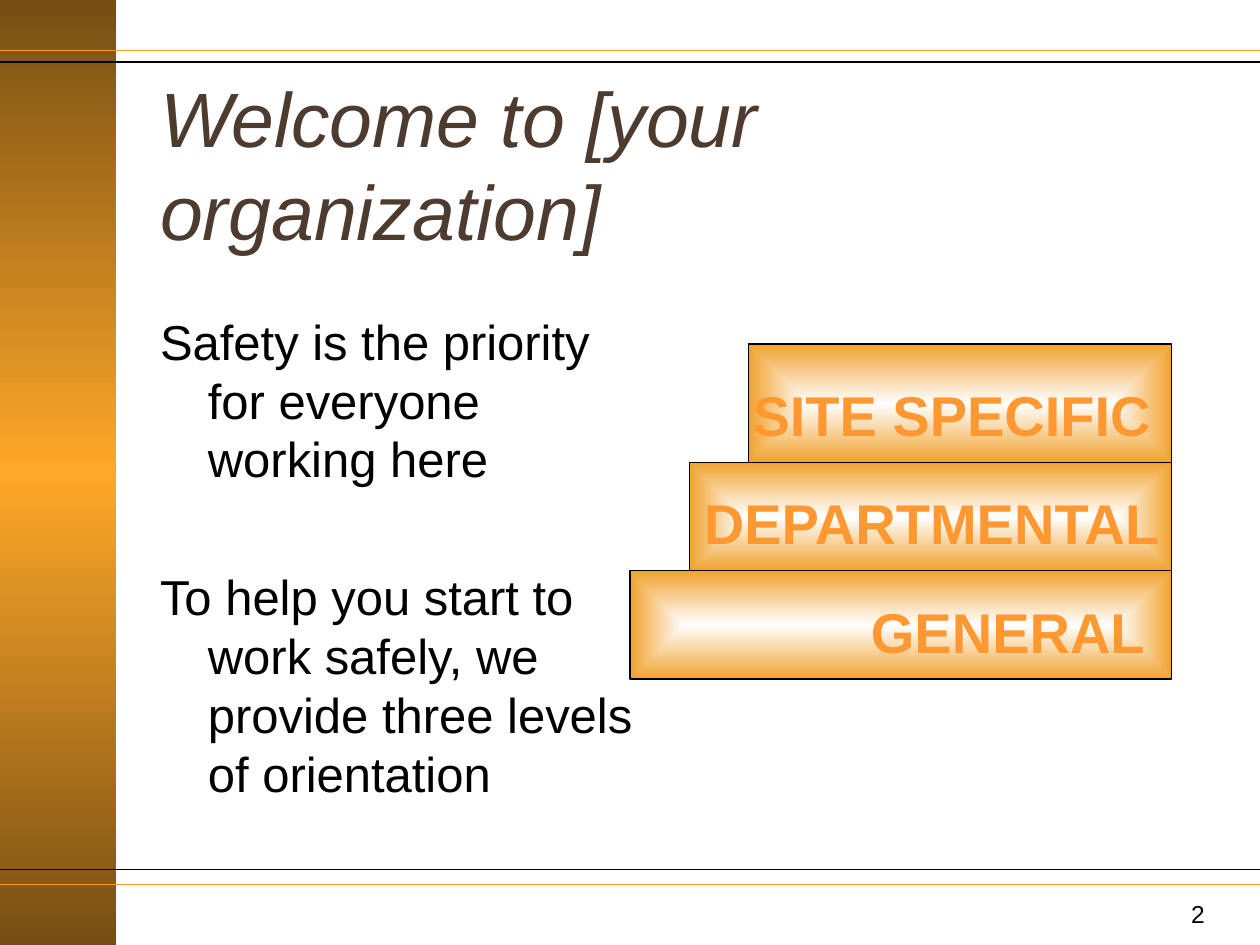
from lxml import etree
from pptx import Presentation
from pptx.dml.color import RGBColor
from pptx.enum import shapes as kinds, text as txt
from pptx.oxml.ns import qn
from pptx.util import Inches, Pt

FONT = "Arial"
BLACK = RGBColor(0x00, 0x00, 0x00)
WHITE = RGBColor(0xFF, 0xFF, 0xFF)
BROWN = RGBColor(0x4E, 0x3B, 0x30)
ORANGE = RGBColor(0xFF, 0x99, 0x33)
LABEL_ORANGE = RGBColor(0xFF, 0x98, 0x31)
STEP_AMBER = RGBColor(0xF0, 0xA2, 0x2E)
BAND_DARK = RGBColor(0x76, 0x4E, 0x13)
BAND_BRIGHT = RGBColor(0xFF, 0xA8, 0x29)

RULES = [(0.4, ORANGE), (0.49, BLACK), (6.9, BLACK), (7.02, ORANGE)]
STEPS_RIGHT = 9.3
# step left, top, height; label text, left, top, width, wrap
STEPS = [
    (5.0, 4.53, 0.86, "GENERAL", 6.8, 4.69, 2.4, False),
    (5.47, 3.67, 0.86, "DEPARTMENTAL", 5.47, 3.83, 3.85, True),
    (5.94, 2.73, 0.94, "SITE SPECIFIC", 5.86, 2.97, 3.39, False),
]
BODY = [
    ("Safety is the priority for everyone working here", 5.6),
    ("To help you start to work safely, we provide three levels of orientation", 45),
]


def set_gradient(shape, stops, from_centre=False):
    """Fill with (percent, colour) stops, running down or out from the centre."""
    shape.fill.solid()
    solid = shape._element.spPr.find(qn("a:solidFill"))
    gradient = etree.Element(qn("a:gradFill"), rotWithShape="1")
    stop_list = etree.SubElement(gradient, qn("a:gsLst"))
    for percent, colour in stops:
        stop = etree.SubElement(stop_list, qn("a:gs"), pos=str(percent * 1000))
        etree.SubElement(stop, qn("a:srgbClr"), val=str(colour))
    if from_centre:
        way = etree.SubElement(gradient, qn("a:path"), path="rect")
        etree.SubElement(way, qn("a:fillToRect"),
                         l="50000", t="50000", r="50000", b="50000")
    else:
        etree.SubElement(gradient, qn("a:lin"), ang="5400000", scaled="1")
    solid.getparent().replace(solid, gradient)


def add_rectangle(slide, left, top, width, height):
    box = slide.shapes.add_shape(kinds.MSO_SHAPE.RECTANGLE, Inches(left),
                                 Inches(top), Inches(width), Inches(height))
    box.shadow.inherit = False
    return box


def add_side_band(slide):
    band = add_rectangle(slide, 0, 0, 0.92, 7.5)
    set_gradient(band, [(0, BAND_DARK), (50, BAND_BRIGHT), (100, BAND_DARK)])
    band.line.fill.background()


def add_rule(slide, y, colour):
    rule = slide.shapes.add_connector(kinds.MSO_CONNECTOR.STRAIGHT,
                                      0, Inches(y), Inches(10), Inches(y))
    rule.line.color.rgb = colour
    rule.line.width = Pt(1)
    etree.SubElement(rule._element.spPr, qn("a:effectLst"))


def add_step(slide, left, top, height):
    step = add_rectangle(slide, left, top, STEPS_RIGHT - left, height)
    set_gradient(step, [(0, WHITE), (100, STEP_AMBER)], from_centre=True)
    step.line.color.rgb = BLACK
    step.line.width = Pt(0.75)


def add_run(paragraph, words, size, colour, bold=False, italic=False):
    run = paragraph.add_run()
    run.text = words
    run.font.name = FONT
    run.font.size = Pt(size)
    run.font.color.rgb = colour
    run.font.bold = bold
    run.font.italic = italic


def add_text(slide, words, left, top, width, height, size, colour, align,
             bold=False, wrap=False, anchor=txt.MSO_ANCHOR.TOP):
    frame = slide.shapes.add_textbox(Inches(left), Inches(top), Inches(width),
                                     Inches(height)).text_frame
    frame.word_wrap = wrap
    frame.vertical_anchor = anchor
    frame.paragraphs[0].alignment = align
    add_run(frame.paragraphs[0], words, size, colour, bold)


def place(holder, left, top, width, height, anchor):
    """Move a placeholder and return its text frame, without autofit."""
    holder.left, holder.top = Inches(left), Inches(top)
    holder.width, holder.height = Inches(width), Inches(height)
    frame = holder.text_frame
    frame.auto_size = txt.MSO_AUTO_SIZE.NONE
    frame.vertical_anchor = anchor
    return frame


def fill_title(slide):
    frame = place(slide.shapes.title, 1.17, 0.67, 8.5, 1.25, txt.MSO_ANCHOR.MIDDLE)
    heading = frame.paragraphs[0]
    heading.alignment = txt.PP_ALIGN.LEFT
    add_run(heading, "Welcome to [your organization]", 44, BROWN, italic=True)


def fill_body(slide):
    frame = place(slide.placeholders[1], 1.17, 2.42, 4.17, 4.5, txt.MSO_ANCHOR.TOP)
    for index, (words, space) in enumerate(BODY):
        paragraph = frame.add_paragraph() if index else frame.paragraphs[0]
        paragraph.space_before = Pt(space)
        properties = paragraph._p.get_or_add_pPr()
        properties.set("marL", str(Inches(0.38)))
        properties.set("indent", str(-Inches(0.38)))
        etree.SubElement(properties, qn("a:buNone"))
        add_run(paragraph, words, 28, BLACK)


def main():
    deck = Presentation()
    deck.slide_width, deck.slide_height = Inches(10), Inches(7.5)
    slide = deck.slides.add_slide(deck.slide_layouts[1])

    add_side_band(slide)
    for y, colour in RULES:
        add_rule(slide, y, colour)
    fill_title(slide)
    fill_body(slide)
    for left, top, height, *_ in STEPS:
        add_step(slide, left, top, height)
    for *_, label, left, top, width, wrap in STEPS:
        add_text(slide, label, left, top, width, 0.64, 32, LABEL_ORANGE,
                 txt.PP_ALIGN.CENTER, bold=True, wrap=wrap)
    add_text(slide, "2", 7.58, 7, 2.08, 0.5, 14, BLACK, txt.PP_ALIGN.RIGHT,
             anchor=txt.MSO_ANCHOR.MIDDLE)
    deck.save("out.pptx")


if __name__ == "__main__":
    main()
